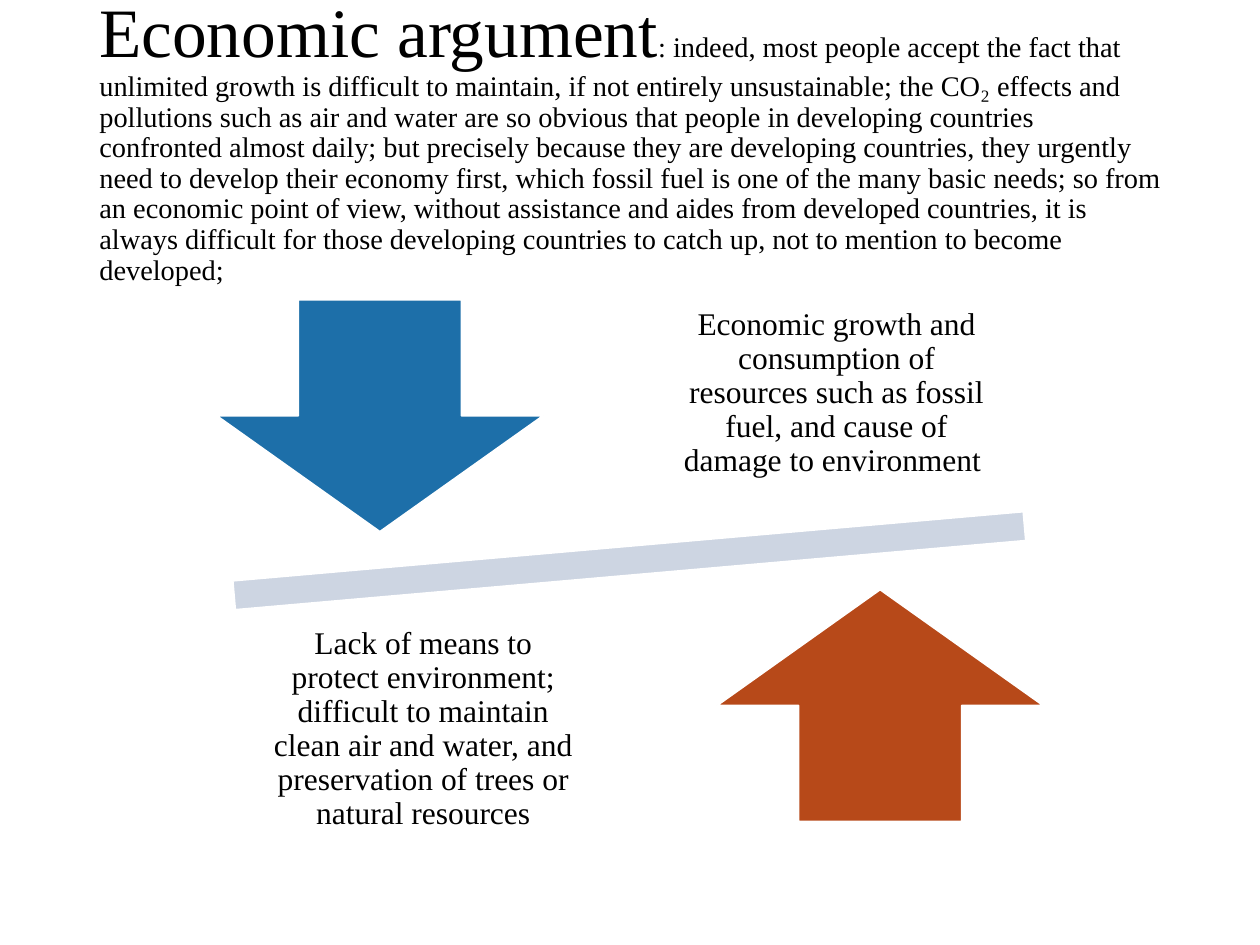
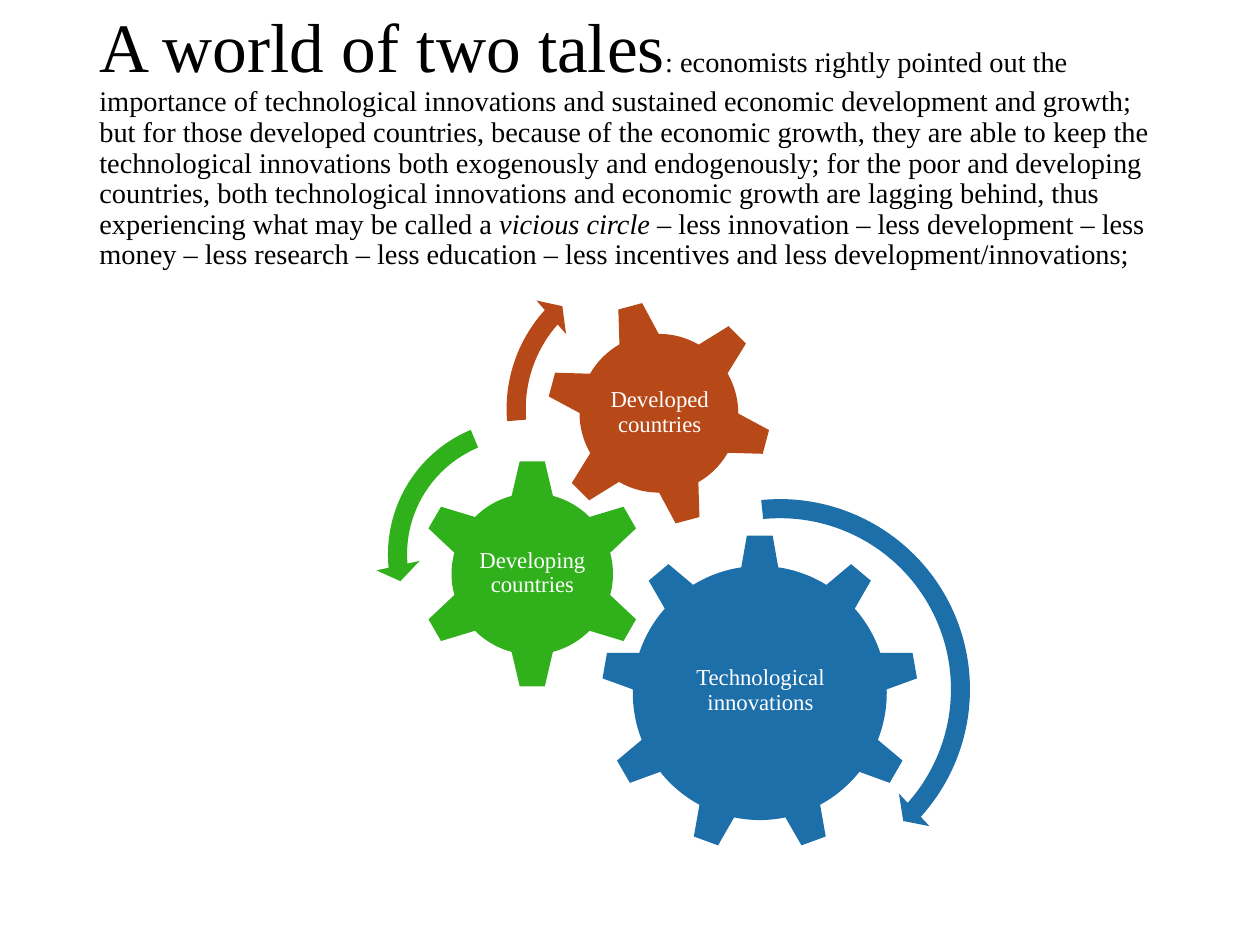
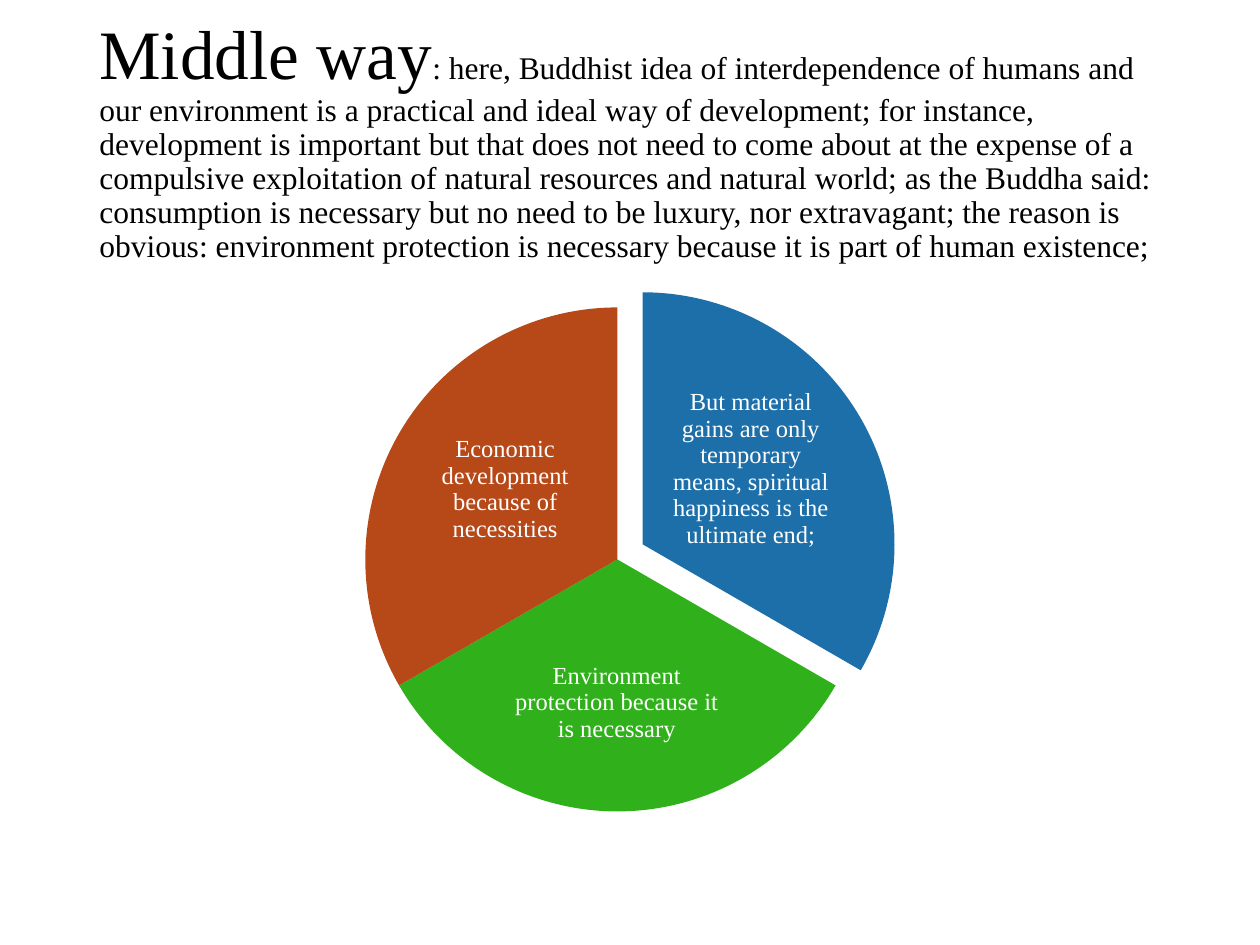
from dataclasses import dataclass
from typing import NamedTuple

from pptx import Presentation
from pptx.dml.color import RGBColor
from pptx.enum.shapes import MSO_SHAPE
from pptx.enum.text import MSO_ANCHOR, PP_ALIGN
from pptx.util import Emu, Pt

PX = 9144
FONT = "Times New Roman"
COLORS = {
    "blue": "1D6FA9",
    "green": "30B01B",
    "rust": "B74919",
    "beam": "CDD5E2",
    "ink": "000000",
    "white": "FFFFFF",
}


class Box(NamedTuple):
    left: int
    top: int
    width: int
    height: int


class Run(NamedTuple):
    text: str
    size: float
    italic: bool = False


@dataclass(frozen=True)
class Figure:
    kind: MSO_SHAPE
    box: Box
    color: str
    rotation: float = 0
    adjustments: tuple[float, ...] = ()
    outline: str | None = None


@dataclass(frozen=True)
class Label:
    text: str
    box: Box


TITLE_BOX = Box(69, 40, 862, 145)
TITLE_SIZE = 39.6


def px(length: int) -> Emu:
    return Emu(length * PX)


def rgb(color: str) -> RGBColor:
    return RGBColor.from_string(COLORS[color])


def turn(degrees: float) -> float:
    return degrees * 0.6


def sweep(thickness: float, head: float, end: float, start: float, width: float) -> tuple[float, ...]:
    return thickness / 100, turn(head), turn(end), turn(start), width / 100


def add_text(slide, box: Box, runs: list[Run], *, color: str = "ink",
             align: PP_ALIGN = PP_ALIGN.CENTER, inset_x: int = 2, inset_y: int = 2) -> None:
    frame = slide.shapes.add_textbox(*map(px, box)).text_frame
    frame.word_wrap = True
    frame.vertical_anchor = MSO_ANCHOR.MIDDLE
    frame.margin_left = frame.margin_right = px(inset_x)
    frame.margin_top = frame.margin_bottom = px(inset_y)
    paragraph = frame.paragraphs[0]
    paragraph.alignment = align
    paragraph.line_spacing = 0.9
    for part in runs:
        run = paragraph.add_run()
        run.text = part.text
        run.font.name = FONT
        run.font.size = Pt(part.size)
        run.font.italic = part.italic
        run.font.color.rgb = rgb(color)


def add_figure(slide, figure: Figure) -> None:
    shape = slide.shapes.add_shape(figure.kind, *map(px, figure.box))
    shape.shadow.inherit = False
    shape.rotation = figure.rotation
    shape.fill.solid()
    shape.fill.fore_color.rgb = rgb(figure.color)
    if figure.outline:
        shape.line.color.rgb = rgb(figure.outline)
        shape.line.width = Pt(1)
    else:
        shape.line.fill.background()
    for index, value in enumerate(figure.adjustments):
        shape.adjustments[index] = value


def add_titled_slide(deck, heading: str, argument: list[Run]):
    slide = deck.slides.add_slide(deck.slide_layouts[6])
    add_text(slide, TITLE_BOX, [Run(heading, TITLE_SIZE), *argument],
             align=PP_ALIGN.LEFT, inset_x=10, inset_y=5)
    return slide


def build_balance(deck) -> None:
    slide = add_titled_slide(deck, "Economic argument", [Run(
        ": indeed, most people accept the fact that unlimited growth is difficult to maintain, "
        "if not entirely unsustainable; the CO₂ effects and pollutions such as air and water are "
        "so obvious that people in developing countries confronted almost daily; but precisely "
        "because they are developing countries, they urgently need to develop their economy "
        "first, which fossil fuel is one of the many basic needs; so from an economic point of "
        "view, without assistance and aides from developed countries, it is always difficult for "
        "those developing countries to catch up, not to mention to become developed;", 16.2)])
    for figure in (
        Figure(MSO_SHAPE.MATH_MINUS, Box(71, 396, 857, 98), "beam", rotation=355, outline="white"),
        Figure(MSO_SHAPE.DOWN_ARROW, Box(172, 238, 259, 184), "blue", outline="white"),
        Figure(MSO_SHAPE.UP_ARROW, Box(569, 468, 259, 184), "rust", outline="white"),
    ):
        add_figure(slide, figure)
    for label in (
        Label("Economic growth and consumption of resources such as fossil fuel, and cause of "
              "damage to environment ", Box(526, 215, 276, 194)),
        Label("Lack of means to protect environment; difficult to maintain clean air and water, "
              "and preservation of trees or natural resources", Box(198, 482, 276, 194)),
    ):
        add_text(slide, label.box, [Run(label.text, 18)], inset_x=14, inset_y=14)


def build_gears(deck) -> None:
    slide = add_titled_slide(deck, "A world of two tales", [
        Run(": economists rightly pointed out the importance of technological innovations and "
            "sustained economic development and growth; but for those developed countries, "
            "because of the economic growth, they are able to keep the technological innovations "
            "both exogenously and endogenously; for the poor and developing countries, both "
            "technological innovations and economic growth are lagging behind, thus experiencing "
            "what may be called a ", 16.2),
        Run("vicious circle", 16.2, italic=True),
        Run(" – less innovation – less development – less money – less research – less education "
            "– less incentives and less development/innovations;", 16.2),
    ])
    gears = (
        (Figure(MSO_SHAPE.GEAR_9, Box(477, 424, 252, 252), "blue"),
         Label("Technological innovations", Box(528, 483, 151, 130))),
        (Figure(MSO_SHAPE.GEAR_6, Box(331, 364, 183, 183), "green"),
         Label("Developing countries", Box(377, 410, 91, 90))),
        (Figure(MSO_SHAPE.GEAR_6, Box(433, 238, 180, 180), "rust", rotation=345),
         Label("Developed countries", Box(473, 277, 101, 101))),
    )
    for gear, label in gears:
        add_figure(slide, gear)
        add_text(slide, label.box, [Run(label.text, 13)], color="white")
    for arrow in (
        Figure(MSO_SHAPE.CIRCULAR_ARROW, Box(458, 386, 322, 322), "blue",
               adjustments=sweep(4.7, 4.98, 41.94, 264.36, 5.5)),
        Figure(MSO_SHAPE.LEFT_CIRCULAR_ARROW, Box(298, 323, 234, 234), "green",
               adjustments=sweep(6.5, 7.17, 174.82, 247.3, 7.5)),
        Figure(MSO_SHAPE.CIRCULAR_ARROW, Box(392, 198, 253, 253), "rust",
               adjustments=sweep(6, 6.57, 221.9, 175.14, 7)),
    ):
        add_figure(slide, arrow)


def build_pie(deck) -> None:
    slide = add_titled_slide(deck, "Middle way", [Run(
        ": here, Buddhist idea of interdependence of humans and our environment is a practical "
        "and ideal way of development; for instance, development is important but that does not "
        "need to come about at the expense of a compulsive exploitation of natural resources and "
        "natural world; as the Buddha said: consumption is necessary but no need to be luxury, "
        "nor extravagant; the reason is obvious: environment protection is necessary because it "
        "is part of human existence;", 18)])
    circle = Box(290, 244, 400, 400)
    pulled_out = circle._replace(left=310, top=232)
    slices = (
        (pulled_out, "blue", Label("But material gains are only temporary means, spiritual "
                                   "happiness is the ultimate end;", Box(528, 306, 136, 133))),
        (circle, "green", Label("Environment protection because it is necessary",
                                Box(399, 496, 181, 124))),
        (circle, "rust", Label("Economic development because of necessities",
                               Box(333, 322, 136, 133))),
    )
    share = 360 // len(slices)
    for index, (box, color, label) in enumerate(slices):
        start = (270 + index * share) % 360
        angles = turn(start), turn((start + share) % 360)
        add_figure(slide, Figure(MSO_SHAPE.PIE, box, color, adjustments=angles))
        add_text(slide, label.box, [Run(label.text, 14)], color="white")


def main() -> None:
    deck = Presentation()
    deck.slide_width, deck.slide_height = px(1000), px(750)
    build_balance(deck)
    build_gears(deck)
    build_pie(deck)
    deck.save("out.pptx")


if __name__ == "__main__":
    main()
